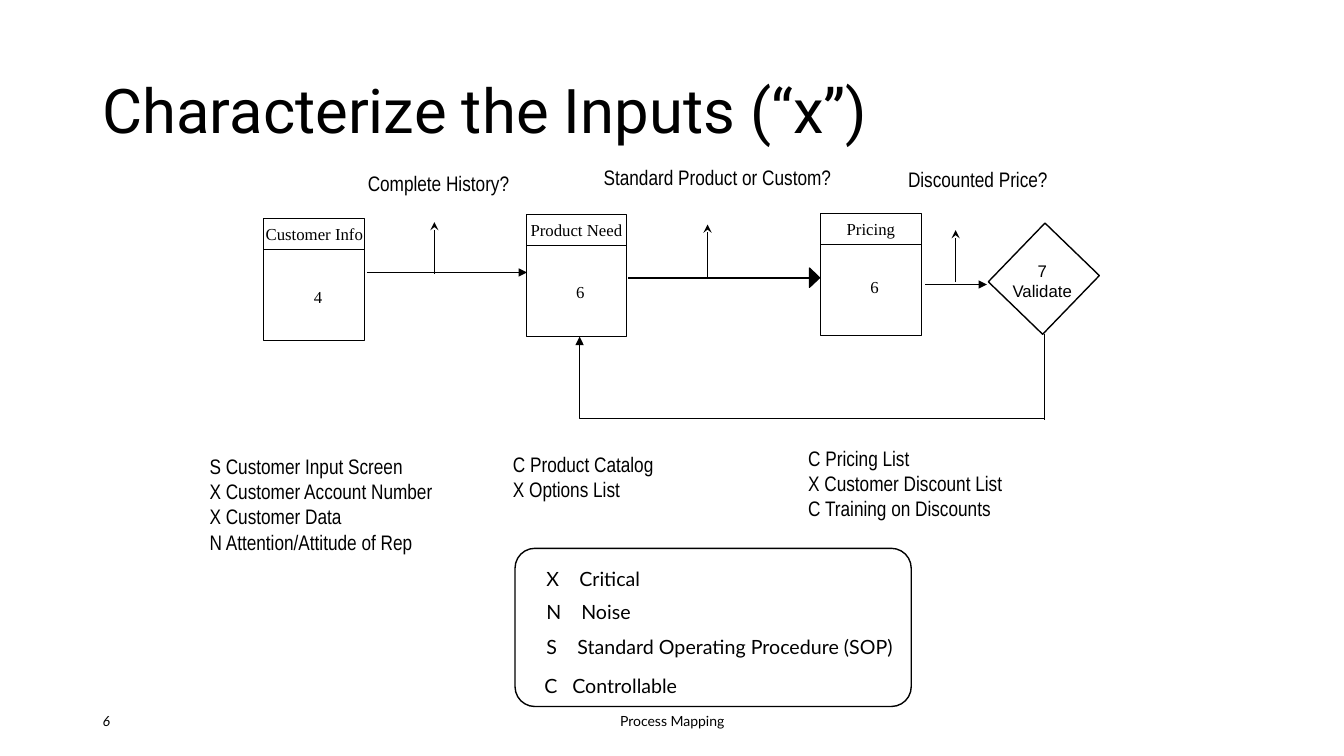
from lxml import etree
from pptx import Presentation
from pptx.dml.color import RGBColor
from pptx.enum.shapes import MSO_CONNECTOR, MSO_SHAPE
from pptx.enum.text import MSO_ANCHOR, PP_ALIGN
from pptx.oxml.ns import qn
from pptx.util import Pt

STRAIGHT, ELBOW = MSO_CONNECTOR.STRAIGHT, MSO_CONNECTOR.ELBOW
RECTANGLE, ROUNDED = MSO_SHAPE.RECTANGLE, MSO_SHAPE.ROUNDED_RECTANGLE
TOP, MIDDLE = MSO_ANCHOR.TOP, MSO_ANCHOR.MIDDLE
LEFT, CENTER = PP_ALIGN.LEFT, PP_ALIGN.CENTER
COLORS = {"ink": "000000", "paper": "FFFFFF"}


def color(name):
    return RGBColor.from_string(COLORS[name])


def write(shape, text, font="Arial Narrow", size=15, align=LEFT, anchor=TOP,
          wrap=True, italic=False, spacing=None, inset=7.2, tab=None):
    frame = shape.text_frame
    frame.word_wrap = wrap
    frame.vertical_anchor = anchor
    frame.margin_left = frame.margin_right = Pt(inset)
    for index, line in enumerate(text.split("\n")):
        paragraph = frame.paragraphs[0] if index == 0 else frame.add_paragraph()
        paragraph.alignment = align
        if spacing:
            paragraph.line_spacing = spacing
        if tab:
            properties = paragraph._p.get_or_add_pPr()
            stops = etree.SubElement(properties, qn("a:tabLst"))
            etree.SubElement(stops, qn("a:tab"), pos=str(int(Pt(tab))), algn="l")
        run = paragraph.add_run()
        run.text = line
        run.font.name, run.font.size = font, Pt(size)
        run.font.italic = italic
        run.font.color.rgb = color("ink")


def add_text(slide, box, text, **style):
    write(slide.shapes.add_textbox(*map(Pt, box)), text, **style)


def outline(shape, width, fill=None):
    shape.shadow.inherit = False
    shape.line.color.rgb = color("ink")
    shape.line.width = Pt(width)
    if fill:
        shape.fill.solid()
        shape.fill.fore_color.rgb = color(fill)
    else:
        shape.fill.background()


def add_box(slide, box, kind=RECTANGLE, width=0.75, fill=None):
    shape = slide.shapes.add_shape(kind, *map(Pt, box))
    outline(shape, width, fill)
    return shape


def add_line(slide, start, end, kind=STRAIGHT, head=None, tail=None):
    connector = slide.shapes.add_connector(kind, *map(Pt, (*start, *end)))
    connector.line.color.rgb = color("ink")
    connector.line.width = Pt(1)
    properties = connector._element.spPr
    for tag, arrow in (("a:headEnd", head), ("a:tailEnd", tail)):
        if arrow:
            etree.SubElement(properties.find(qn("a:ln")), qn(tag), type=arrow)
    etree.SubElement(properties, qn("a:effectLst"))
    return connector


def draw_step(slide, left, top, name, count, count_top):
    width, header, body = 72, 21.8, 65.5
    title = add_box(slide, (left, top, width, header), fill="paper")
    write(title, name, font="Times New Roman", size=12, align=CENTER,
          anchor=MIDDLE, wrap=False)
    add_box(slide, (left, top + header, width, body))
    add_text(slide, (left + 28.6, top + count_top, 20.2, 21.6), count,
             font="Times New Roman", size=12, wrap=False)


def draw_decision(slide, left, top, width, height):
    diamond = add_box(slide, (left, top, width, height), width=1, fill="paper")
    diamond.rotation = 44
    add_text(slide, (left - 2.9, top + 13, 57.6, 36), "7\nValidate",
             font="Arial", size=12, align=CENTER, wrap=False)


def draw_flow(slide):
    add_line(slide, (262.1, 194.6), (376.4, 194.6), tail="triangle")
    add_line(slide, (448.6, 198.5), (578.2, 198.5))
    add_line(slide, (661, 203.2), (704.9, 203.2), tail="triangle")
    builder = slide.shapes.build_freeform(Pt(585.4), Pt(198.4))
    builder.add_line_segments([(Pt(578.2), Pt(205.2)), (Pt(578.2), Pt(191.5))])
    outline(builder.convert_to_shape(), 1, "ink")

    for x, bottom in ((310.3, 195.8), (505.4, 197.6), (682.6, 201.6)):
        add_line(slide, (x, bottom), (x, bottom - 37.2), tail="stealth")
    for left, top, width, question in (
            (255.6, 118.1, 115.9, "Complete History?"),
            (424.1, 113.8, 177.8, "Standard Product or Custom?"),
            (641.5, 115.2, 115.9, "Discounted Price?")):
        add_text(slide, (left, top, width, 25.2), question, wrap=False)

    for step in ((188.6, 156.2, "Customer Info", "4", 45.4),
                 (375.8, 153.4, "Product Need", "6", 44.6),
                 (586.1, 152.6, "Pricing", "6", 41.8)):
        draw_step(slide, *step)
    draw_decision(slide, 718.6, 169.9, 54, 58.3)

    rework = add_line(slide, (414, 240.5), (745.9, 298.8), ELBOW, head="triangle")
    adjustments = rework._element.spPr.find(qn("a:prstGeom")).get_or_add_avLst()
    etree.SubElement(adjustments, qn("a:gd"), name="adj1", fmla="val 0")
    add_line(slide, (745.9, 238.3), (745.9, 300.2))


def draw_inputs(slide):
    for left, top, width, lines in (
            (142.6, 320.4, 183.6, ("S Customer Input Screen",
                                   "X Customer Account Number",
                                   "X Customer Data",
                                   "N Attention/Attitude of Rep")),
            (359.3, 319, 124.6, ("C Product Catalog", "X Options List")),
            (570.2, 314.6, 155.5, ("C Pricing List",
                                   "X Customer Discount List",
                                   "C Training on Discounts"))):
        add_text(slide, (left, top, width, 7.2 + 18.2 * len(lines)),
                 "\n".join(lines))


def draw_legend(slide, left, top, width, height):
    frame = add_box(slide, (left, top, width, height), ROUNDED, width=1)
    frame.adjustments[0] = 0.125
    for indent, offset, tab, entry in (
            (14.4, 9.4, 23.6, "X\tCritical"),
            (14.4, 33.1, 25, "N\tNoise"),
            (14.4, 58.3, 22.3, "S\tStandard Operating Procedure (SOP)"),
            (13, 86.4, 20, "C\tControllable")):
        add_text(slide, (left + indent, top + offset, width - indent, 24.5),
                 entry, font="Lato", size=14, inset=7.9, tab=tab)


def draw_footer(slide, top, height):
    add_text(slide, (66.2, top, 216, height), "6", font="Lato", size=10,
             anchor=MIDDLE, italic=True)
    add_text(slide, (318.2, top, 324, height), "Process Mapping", font="Lato",
             size=10, align=CENTER, anchor=MIDDLE)


def main():
    presentation = Presentation()
    presentation.slide_width, presentation.slide_height = Pt(960), Pt(540)
    slide = presentation.slides.add_slide(presentation.slide_layouts[6])
    draw_footer(slide, 500.4, 28.8)
    draw_legend(slide, 367.9, 391.7, 283, 113)
    add_text(slide, (66.2, 28.8, 828, 104.4), "Characterize the Inputs (“x”)",
             font="Roboto", size=44, anchor=MIDDLE, spacing=0.9)
    draw_inputs(slide)
    draw_flow(slide)
    presentation.save("out.pptx")


if __name__ == "__main__":
    main()
